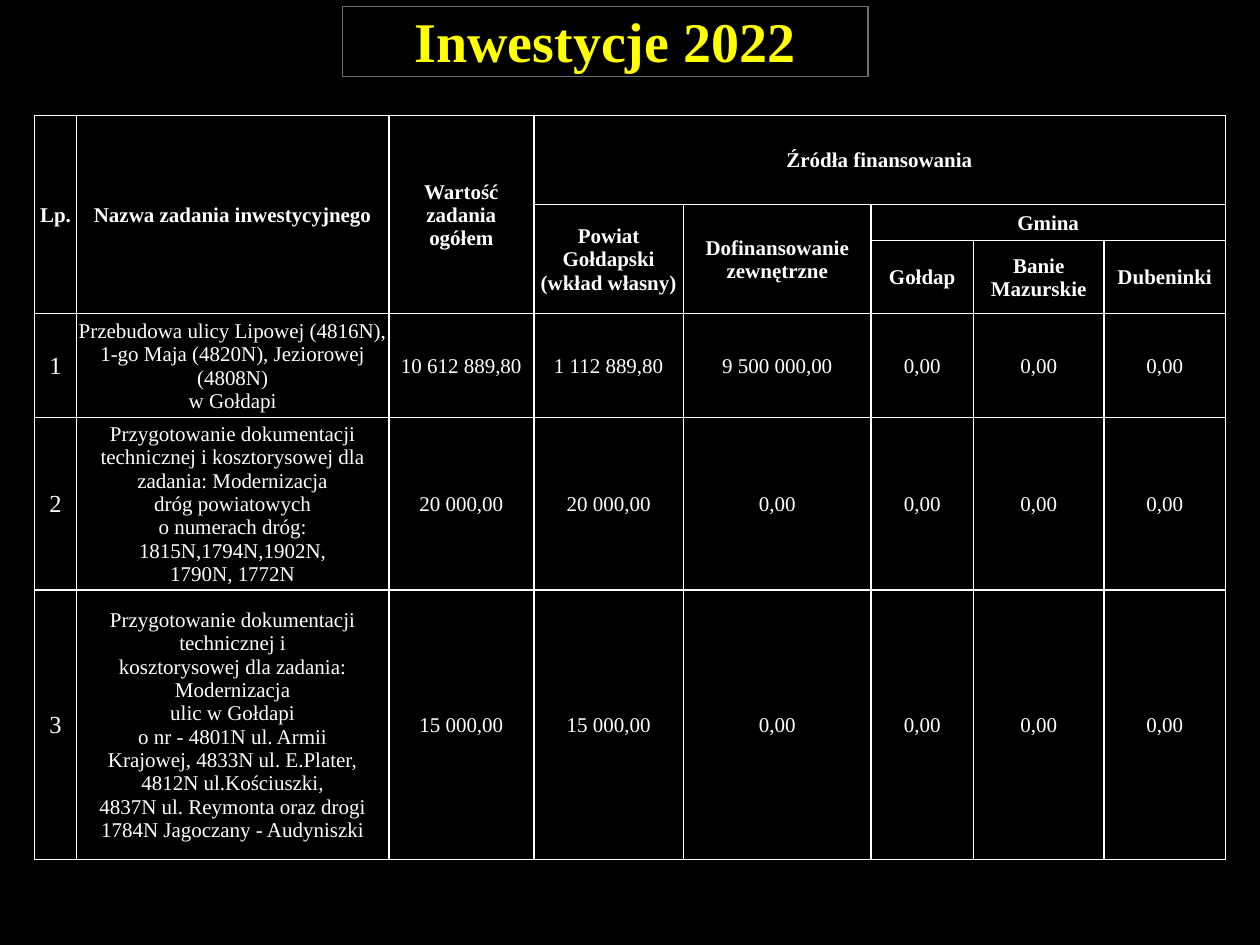
from lxml import etree
from pptx import Presentation
from pptx.dml.color import RGBColor
from pptx.enum.text import MSO_ANCHOR, MSO_AUTO_SIZE, PP_ALIGN
from pptx.oxml import parse_xml
from pptx.oxml.ns import nsdecls
from pptx.util import Cm, Pt

CENTER = PP_ALIGN.CENTER
TOP, MIDDLE = MSO_ANCHOR.TOP, MSO_ANCHOR.MIDDLE
NO_AUTOFIT = MSO_AUTO_SIZE.NONE
BLACK = RGBColor(0x00, 0x00, 0x00)
WHITE = RGBColor(0xFF, 0xFF, 0xFF)
YELLOW = RGBColor(0xFF, 0xFF, 0x00)
GREY = RGBColor(0x6F, 0x6F, 0x6F)
FONT = "Times New Roman"

COLUMN_WIDTHS = [0.84, 6.3, 2.92, 3.02, 3.78, 2.06, 2.64, 2.44]
ROW_HEIGHTS = [1.79, 0.73, 1.47, 2.1, 3.47, 5.44]
HEADER_ROWS = 3

HEADERS = [
    (0, 0, 2, 0, "Lp."),
    (0, 1, 2, 1, "Nazwa zadania inwestycyjnego"),
    (0, 2, 2, 2, "Wartość zadania ogółem"),
    (0, 3, 0, 7, "Źródła finansowania"),
    (1, 3, 2, 3, "Powiat Gołdapski (wkład własny)"),
    (1, 4, 2, 4, "Dofinansowanie zewnętrzne"),
    (1, 5, 1, 7, "Gmina"),
    (2, 5, 2, 5, "Gołdap"),
    (2, 6, 2, 6, "Banie Mazurskie"),
    (2, 7, 2, 7, "Dubeninki"),
]

TASKS = [
    (["Przebudowa ulicy Lipowej (4816N), 1-go Maja (4820N), Jeziorowej (4808N)",
      "w Gołdapi"],
     ["10 612 889,80", "1 112 889,80", "9 500 000,00"]),
    (["Przygotowanie dokumentacji technicznej i kosztorysowej dla zadania: Modernizacja",
      "dróg powiatowych",
      "o numerach dróg:",
      "1815N,1794N,1902N,",
      "1790N, 1772N"],
     ["20 000,00", "20 000,00", "0,00"]),
    (["Przygotowanie dokumentacji technicznej i",
      "kosztorysowej dla zadania: Modernizacja",
      "ulic w Gołdapi",
      "o nr - 4801N ul. Armii",
      "Krajowej, 4833N ul. E.Plater,",
      "4812N ul.Kościuszki,",
      "4837N ul. Reymonta oraz drogi",
      "1784N Jagoczany - Audyniszki"],
     ["15 000,00", "15 000,00", "0,00"]),
]
MUNICIPAL_SHARES = ["0,00"] * 3


def write(tf, lines, size, color, bold=False):
    for i, line in enumerate(lines):
        p = tf.paragraphs[0] if i == 0 else tf.add_paragraph()
        p.alignment = CENTER
        r = p.add_run()
        r.text = line
        r.font.name = FONT
        r.font.size = Pt(size)
        r.font.bold = bold
        r.font.color.rgb = color


def format_cell(cell):
    cell.margin_left = cell.margin_right = cell.margin_top = Cm(0.03)
    cell.margin_bottom = 0
    cell.vertical_anchor = MIDDLE
    cell.fill.background()
    tc_pr = cell._tc.get_or_add_tcPr()
    for i, side in enumerate(("lnL", "lnR", "lnT", "lnB")):
        line = parse_xml(f'<a:{side} {nsdecls("a")} w="{Pt(1)}"/>')
        fill = etree.SubElement(line, line.tag.replace(side, "solidFill"))
        etree.SubElement(fill, line.tag.replace(side, "srgbClr"), val=str(WHITE))
        tc_pr.insert(i, line)


prs = Presentation()
prs.slide_width, prs.slide_height = Cm(25.4), Cm(19.05)
s = prs.slides.add_slide(prs.slide_layouts[5])
s.background.fill.solid()
s.background.fill.fore_color.rgb = BLACK

frame = s.shapes.add_table(len(ROW_HEIGHTS), len(COLUMN_WIDTHS), Cm(0.7), Cm(2.33),
                           Cm(sum(COLUMN_WIDTHS)), Cm(sum(ROW_HEIGHTS)))
table = frame.table
table.first_row = table.horz_banding = False
for column, width in zip(table.columns, COLUMN_WIDTHS):
    column.width = Cm(width)
for row, height in zip(table.rows, ROW_HEIGHTS):
    row.height = Cm(height)
for cell in table.iter_cells():
    format_cell(cell)

for top, left, bottom, right, label in HEADERS:
    cell = table.cell(top, left)
    if (top, left) != (bottom, right):
        cell.merge(table.cell(bottom, right))
    write(cell.text_frame, [label], 12, WHITE, bold=True)

total_header = table.cell(0, 2)
total_header.margin_left = total_header.margin_right = Cm(0.2)

for number, (name, amounts) in enumerate(TASKS, 1):
    row = HEADER_ROWS + number - 1
    write(table.cell(row, 0).text_frame, [str(number)], 14, WHITE)
    write(table.cell(row, 1).text_frame, name, 12, WHITE)
    for col, amount in enumerate(amounts + MUNICIPAL_SHARES, 2):
        write(table.cell(row, col).text_frame, [amount], 12, WHITE)

title = s.shapes.title
title.left, title.top, title.width, title.height = Cm(6.9), Cm(0.13), Cm(10.6), Cm(1.42)
title.line.color.rgb = GREY
title.line.width = Pt(0.75)
tf = title.text_frame
tf.word_wrap = True
tf.auto_size = NO_AUTOFIT
tf.vertical_anchor = TOP
tf.margin_top = tf.margin_bottom = 0
write(tf, ["Inwestycje 2022"], 32, YELLOW, bold=True)

prs.save("out.pptx")
